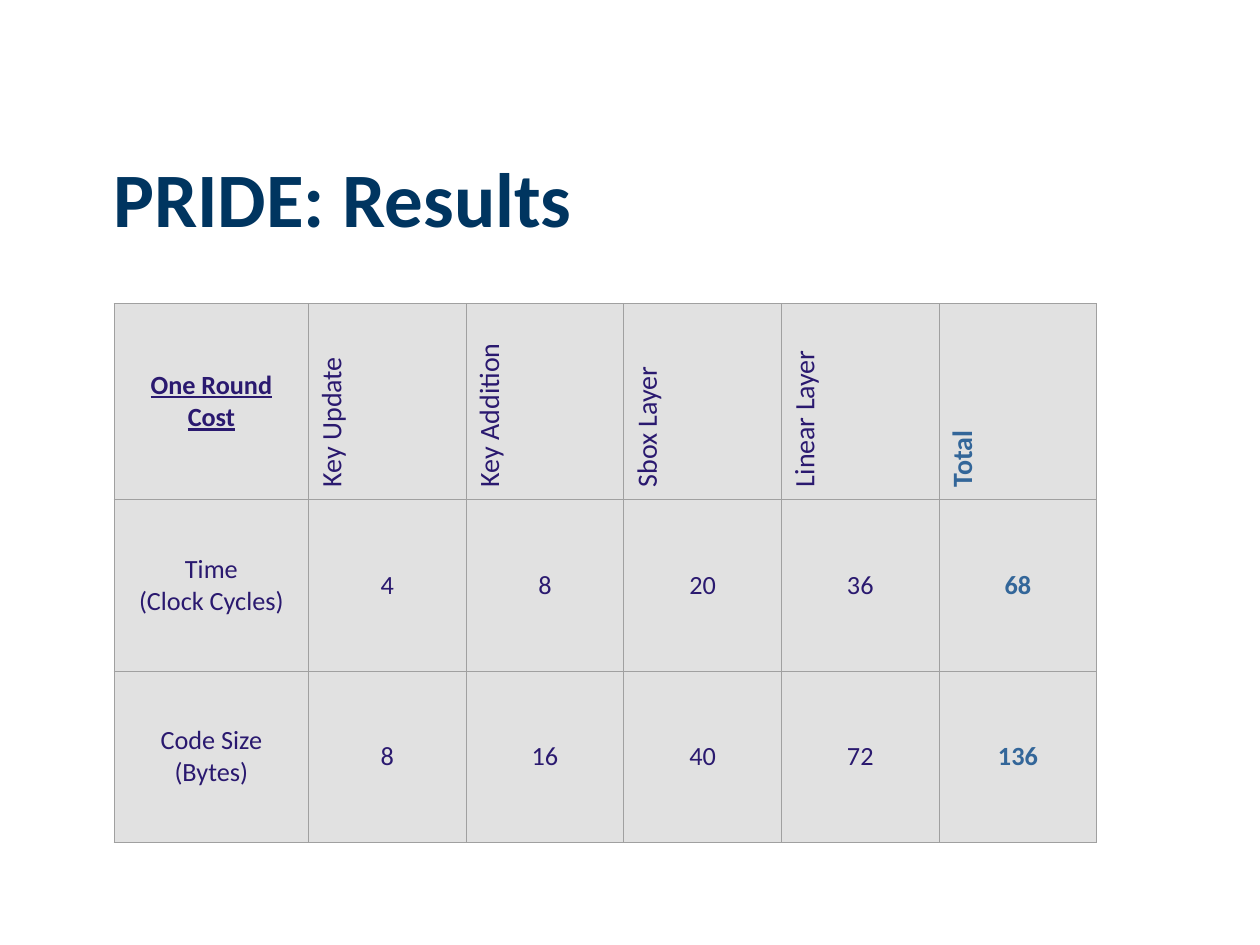
import lxml.etree
import pptx
import pptx.dml.color
import pptx.enum.text
import pptx.oxml.ns
import pptx.util

Pt = pptx.util.Pt
ALIGN = pptx.enum.text.PP_ALIGN
MIDDLE = pptx.enum.text.MSO_ANCHOR.MIDDLE

FONT = "Calibri"
TITLE, INK, TOTAL = "003560", "2A196F", "336699"
CELL_FILL, BORDER = "E1E1E1", "A0A0A0"

ROWS = [
    ["One Round\nCost", "Key Update", "Key Addition", "Sbox Layer", "Linear Layer", "Total"],
    ["Time\n(Clock Cycles)", "4", "8", "20", "36", "68"],
    ["Code Size\n(Bytes)", "8", "16", "40", "72", "136"],
]


def rgb(value):
    return pptx.dml.color.RGBColor.from_string(value)


def write(tf, text, color, align, **formats):
    """Fill a text frame, one paragraph for each line."""
    for i, line in enumerate(text.split("\n")):
        p = tf.paragraphs[0] if i == 0 else tf.add_paragraph()
        p.alignment = align
        r = p.add_run()
        r.text = line
        r.font.color.rgb = rgb(color)
        for name, value in {"name": FONT, **formats}.items():
            setattr(r.font, name, value)


def add_borders(cell, color, width):
    tcPr = cell._tc.get_or_add_tcPr()
    qn = pptx.oxml.ns.qn
    for side in ("lnL", "lnR", "lnT", "lnB"):
        ln = lxml.etree.SubElement(tcPr, qn("a:" + side), w=str(Pt(width)))
        fill = lxml.etree.SubElement(ln, qn("a:solidFill"))
        lxml.etree.SubElement(fill, qn("a:srgbClr"), val=color)


def add_title(slide, left, top, width, height):
    sp = slide.shapes.add_textbox(Pt(left), Pt(top), Pt(width), Pt(height))
    tf = sp.text_frame
    margins = {"margin_left": 8, "margin_right": 8, "margin_top": 4, "margin_bottom": 4}
    for name, value in margins.items():
        setattr(tf, name, Pt(value))
    tf.word_wrap = True
    tf.vertical_anchor = MIDDLE
    write(tf, "PRIDE: Results", TITLE, ALIGN.CENTER, size=Pt(44), bold=True)
    tf.paragraphs[0].line_spacing = 0.83


def add_cost_table(slide, left, top, width, height):
    n_rows, n_cols = len(ROWS), len(ROWS[0])
    frame = slide.shapes.add_table(n_rows, n_cols, Pt(left), Pt(top), Pt(width), Pt(height))
    table = frame.table
    table.first_row = table.horz_banding = False

    # The label column and the header row are larger; the rest share evenly
    label_width, header_height = 111, 112
    for i, col in enumerate(table.columns):
        col.width = Pt(label_width if i == 0 else (width - label_width) / (n_cols - 1))
    for i, row in enumerate(table.rows):
        row.height = Pt(header_height if i == 0 else (height - header_height) / (n_rows - 1))

    for i, texts in enumerate(ROWS):
        for j, text in enumerate(texts):
            cell = table.cell(i, j)
            add_borders(cell, BORDER, 0.75)
            cell.fill.solid()
            cell.fill.fore_color.rgb = rgb(CELL_FILL)
            cell.vertical_anchor = MIDDLE

            # Column headings read upwards
            heading = i == 0 and j > 0
            if heading:
                cell._tc.get_or_add_tcPr().set("vert", "vert270")
            corner, total = i == j == 0, j == n_cols - 1
            write(cell.text_frame, text, TOTAL if total else INK,
                  ALIGN.LEFT if heading else ALIGN.CENTER,
                  size=Pt(16 if heading else 15), bold=corner or total, underline=corner)


def main():
    prs = pptx.Presentation()
    prs.slide_width, prs.slide_height = Pt(720), Pt(540)
    slide = prs.slides.add_slide(prs.slide_layouts[6])
    add_title(slide, 14.4, 88.5, 363, 57)
    add_cost_table(slide, 65.3, 173.5, 561.5, 308)
    prs.save("out.pptx")


if __name__ == "__main__":
    main()
